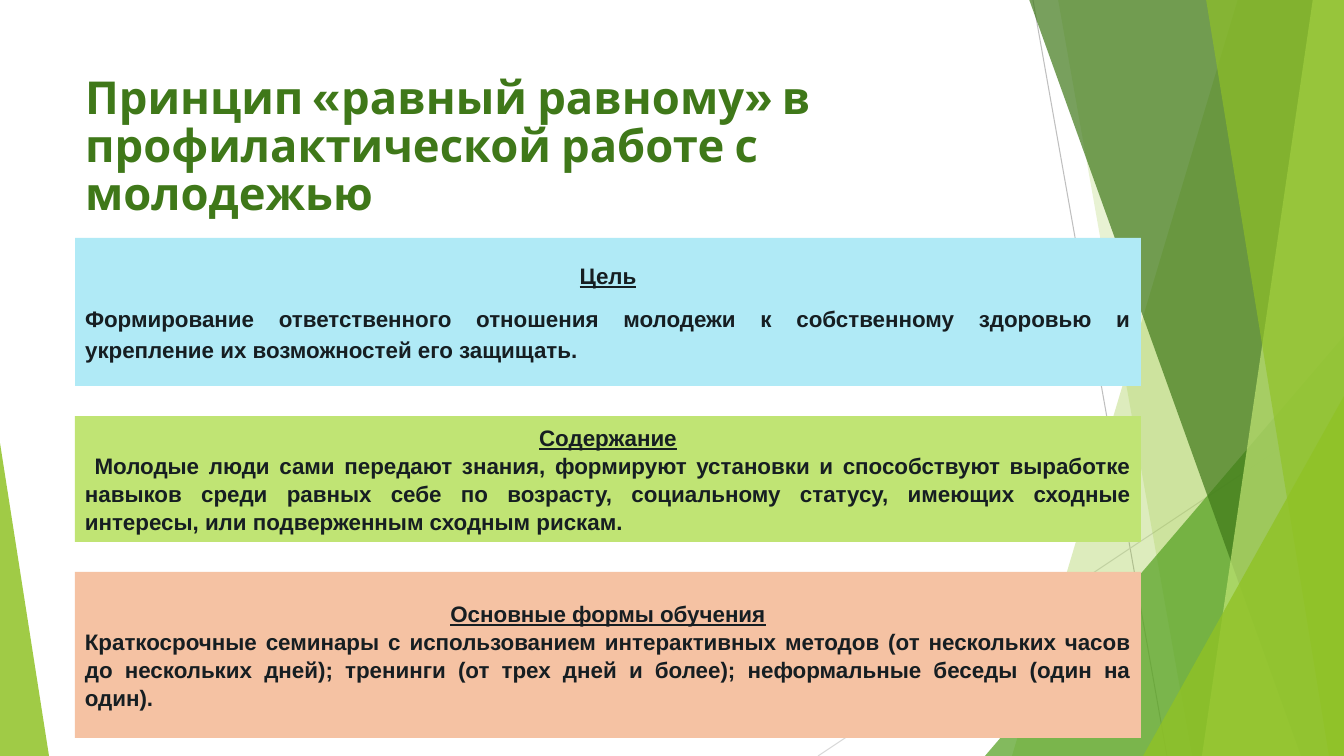
from lxml import etree
from pptx import Presentation
from pptx import util as u
from pptx.dml.color import RGBColor
from pptx.enum import shapes, text
from pptx.oxml import ns

PX = 12192000 / 1344
COLORS = {
    "lime": "90C226", "green": "54A021", "forest": "3F7819", "pale": "C0E474",
    "sky": "B0EAF6", "peach": "F5C2A3", "ink": "161E22",
    "grey": "BFBFBF", "silver": "D9D9D9",
}


def px(*lengths):
    return [u.Emu(round(length * PX)) for length in lengths]


def paint(shape, color, opacity=100):
    shape.fill.solid()
    shape.fill.fore_color.rgb = RGBColor.from_string(COLORS[color])
    shape.line.fill.background()
    if opacity < 100:
        tint = shape.element.spPr.find(ns.qn("a:solidFill"))[0]
        etree.SubElement(tint, ns.qn("a:alpha"), val=str(opacity * 1000))


deck = Presentation()
deck.slide_width, deck.slide_height = px(1344, 756)
page = deck.slides.add_slide(deck.slide_layouts[1])
title, goal = page.placeholders

for ends, color in [((1033, 0, 1167, 756), "grey"), ((1344, 406, 818, 756), "silver")]:
    ray = page.shapes.add_connector(shapes.MSO_CONNECTOR.STRAIGHT, *px(*ends))
    ray.line.color.rgb = RGBColor.from_string(COLORS[color])
    ray.line.width = u.Pt(0.75)
    etree.SubElement(ray.element.spPr, ns.qn("a:effectLst"))

facets = [
    ("band", (1238, 1012), "lime", 30),
    ("band", (1058, 1192), "lime", 20),
    ("triangle", (985, 336, 359, 420, 1), "green", 72),
    ("band", (1029, 1301), "forest", 70),
    ("band", (1313, 1202), "pale", 70),
    ("band", (1206, 1329), "lime", 65),
    ("triangle", (1143, 396, 201, 360, 1), "lime", 80),
    ("triangle", (0, 443, 49, 313, 0), "lime", 85),
]
for kind, numbers, color, opacity in facets:
    if kind == "band":
        top, bottom = numbers
        outline = page.shapes.build_freeform(top, -1, scale=PX)
        outline.add_line_segments([(1344, -1), (1344, 756), (bottom, 756)])
        facet = outline.convert_to_shape()
    else:
        *frame, apex = numbers
        facet = page.shapes.add_shape(shapes.MSO_SHAPE.ISOSCELES_TRIANGLE, *px(*frame))
        facet.adjustments[0] = apex
    facet.shadow.inherit = False
    paint(facet, color, opacity)

title.left, title.top, title.width, title.height = px(75, 68, 948, 145)
title.text = "Принцип «равный равному» в профилактической работе с молодежью"
title.text_frame.auto_size = text.MSO_AUTO_SIZE.NONE
title.text_frame.vertical_anchor = text.MSO_ANCHOR.TOP
title.text_frame.margin_top = px(8)[0]
para = title.text_frame.paragraphs[0]
para.alignment = text.PP_ALIGN.LEFT
para.line_spacing = 0.88
para.font.name, para.font.size, para.font.bold = "Cabin", u.Pt(32.4), True
para.font.color.rgb = RGBColor.from_string(COLORS["forest"])

panels = [
    (238, 148, "sky", "Цель",
     "Формирование ответственного отношения молодежи к собственному здоровью "
     "и укрепление их возможностей его защищать.", 8, 1.17),
    (416, 126, "pale", "Содержание",
     " Молодые люди сами передают знания, формируют установки и способствуют "
     "выработке навыков среди равных себе по возрасту, социальному статусу, "
     "имеющих сходные интересы, или подверженным сходным рискам.", 0, 1.05),
    (572, 166, "peach", "Основные формы обучения",
     "Краткосрочные семинары с использованием интерактивных методов (от нескольких "
     "часов до нескольких дней); тренинги (от трех дней и более); неформальные "
     "беседы (один на один).", 0, 1.05),
]
for top, height, color, heading, detail, gap, spacing in panels:
    frame = px(75, top, 1066, height)
    if heading == "Цель":
        box = goal
        box.left, box.top, box.width, box.height = frame
        box.element.getparent().append(box.element)
    else:
        box = page.shapes.add_shape(shapes.MSO_SHAPE.RECTANGLE, *frame)
        box.shadow.inherit = False
    paint(box, color)
    box.text_frame.text = f"{heading}\n{detail}"
    box.text_frame.word_wrap = True
    box.text_frame.auto_size = text.MSO_AUTO_SIZE.NONE
    box.text_frame.vertical_anchor = text.MSO_ANCHOR.MIDDLE
    head, body = box.text_frame.paragraphs
    head.alignment, body.alignment = text.PP_ALIGN.CENTER, text.PP_ALIGN.JUSTIFY
    head.line_spacing, body.line_spacing = 1.05, spacing
    head.space_before, body.space_before = u.Pt(0), u.Pt(gap)
    head.font.underline = True
    for para in (head, body):
        para.font.name, para.font.size, para.font.bold = "Arial", u.Pt(16), True
        para.font.color.rgb = RGBColor.from_string(COLORS["ink"])
        if box is goal:
            layout = para._p.get_or_add_pPr()
            layout.set("marL", "0")
            layout.set("indent", "0")
            bullet = etree.Element(ns.qn("a:buNone"))
            layout.find(ns.qn("a:defRPr")).addprevious(bullet)

deck.save("out.pptx")
